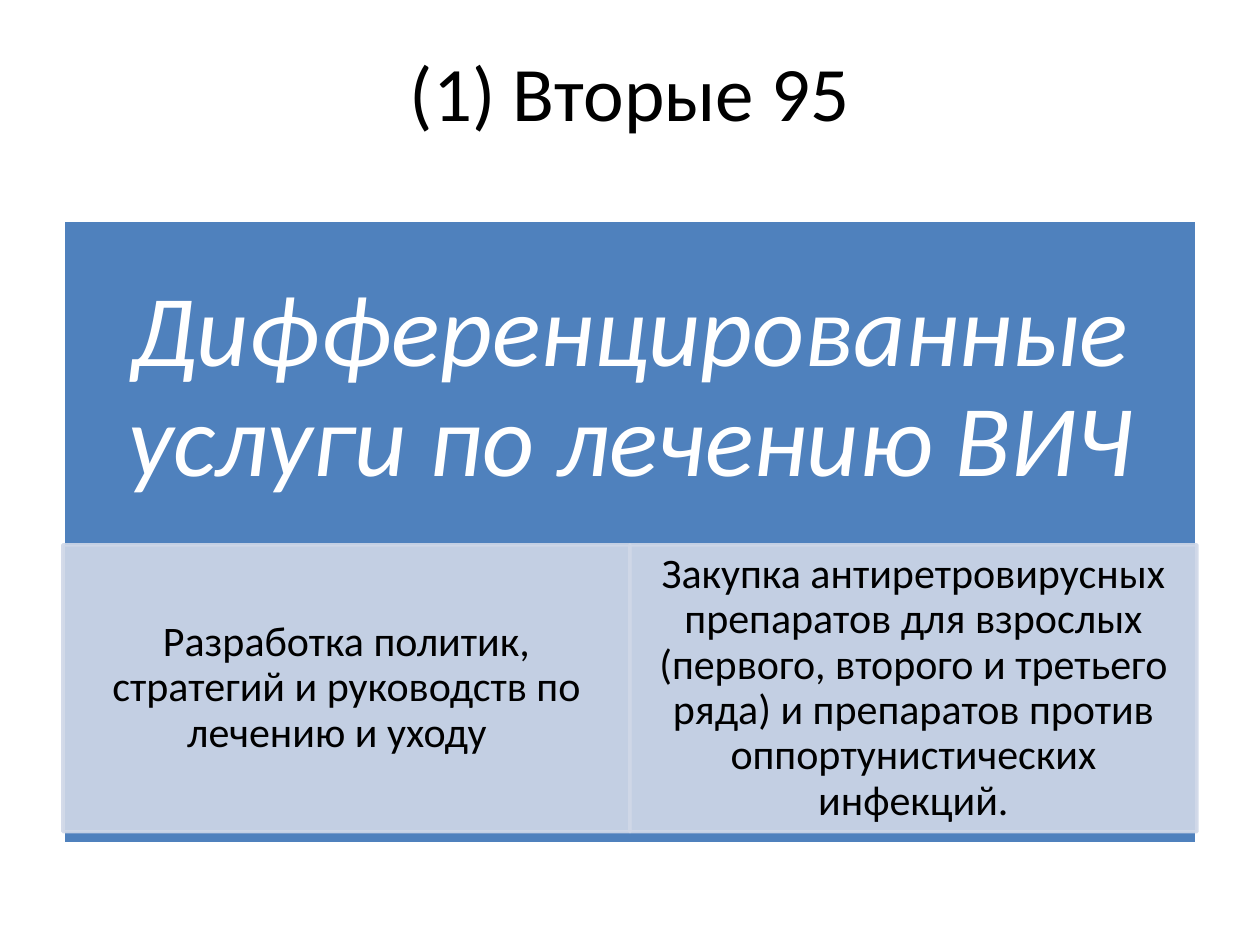
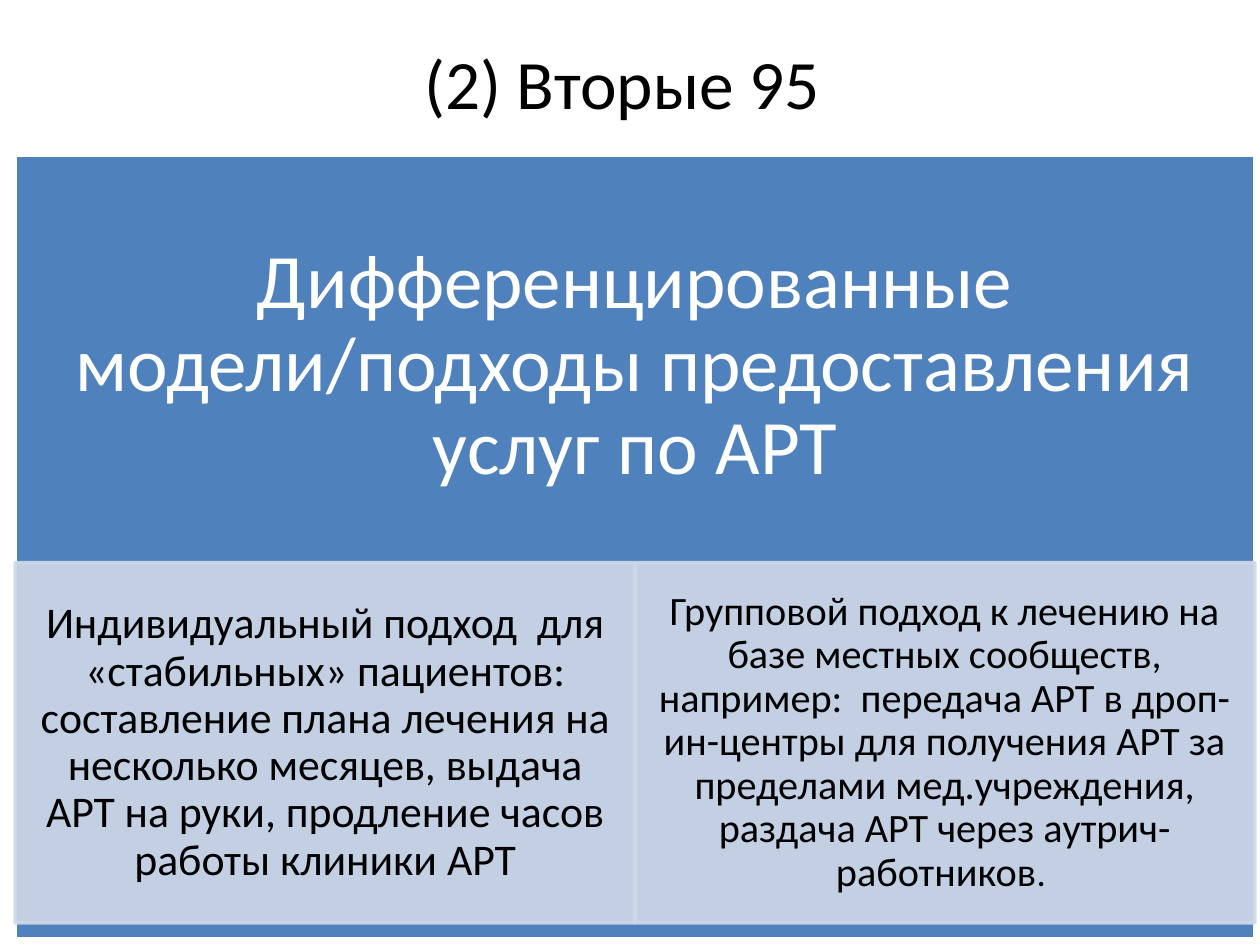
from dataclasses import dataclass

from lxml import etree
from pptx import Presentation
from pptx import util as u
from pptx.dml.color import RGBColor
from pptx.enum import shapes, text
from pptx.oxml.ns import qn

PAGE_WIDTH, PAGE_HEIGHT = 10, 7.5
FONT = "Calibri"
COLORS = {"band": "4F81BD", "cell": "D0D8E8", "white": "FFFFFF", "black": "000000"}
CELL_OPACITY = 90
# Shares of the band's height
HEADING_SHARE, CELL_TOP, CELL_SHARE = 0.54, 0.52, 0.46


@dataclass(frozen=True)
class Frame:
    left: float
    top: float
    width: float
    height: float

    def lengths(self) -> list[u.Inches]:
        return [u.Inches(n) for n in (self.left, self.top, self.width, self.height)]


@dataclass(frozen=True)
class Label:
    words: str
    size: float
    color: str = "black"
    italic: bool = False
    ending: str = ""
    ending_size: float = 0


@dataclass(frozen=True)
class Topic:
    title: Label
    title_frame: Frame
    band: Frame
    heading: Label
    heading_inset: float
    cells: tuple[Label, ...]


TOPICS = (
    Topic(
        Label("(1) Вторые 95", 44), Frame(0.5, 0.13, 9, 1.18),
        Frame(0.5, 1.75, 9, 4.95),
        Label("Дифференцированные услуги по лечению ВИЧ", 58, "white", True), 0.45,
        (
            Label("Разработка политик, стратегий и руководств по лечению и уходу  ", 24),
            Label("Закупка антиретровирусных препаратов для взрослых (первого, второго "
                  "и третьего ряда) и препаратов против оппортунистических инфекций.", 24),
        ),
    ),
    Topic(
        Label("(2) Вторые 95 ", 39.6), Frame(0.5, 0.3, 9, 0.69),
        Frame(0.12, 1.23, 9.84, 6.22),
        Label("Дифференцированные модели/подходы предоставления услуг по АРТ", 44, "white"), 0.34,
        (
            Label("Индивидуальный подход  для «стабильных» пациентов: составление плана "
                  "лечения на несколько месяцев, выдача АРТ на руки, продление часов "
                  "работы клиники АРТ", 25),
            Label("Групповой подход к лечению на базе местных сообществ, например:  "
                  "передача АРТ в дроп-ин-центры для получения АРТ за пределами "
                  "мед.учреждения, раздача АРТ через аутрич-работников", 23,
                  ending=". ", ending_size=21),
        ),
    ),
)


def rgb(name: str) -> RGBColor:
    return RGBColor.from_string(COLORS[name])


def write(box, label: Label, side: float = 0.1, top: float = 0.05,
          bottom: float = 0.05, spacing: float = 1.0) -> None:
    """Fill a box with one centred paragraph."""
    frame = box.text_frame
    frame.word_wrap = True
    frame.vertical_anchor = text.MSO_ANCHOR.MIDDLE
    frame.margin_left = frame.margin_right = u.Inches(side)
    frame.margin_top, frame.margin_bottom = u.Inches(top), u.Inches(bottom)
    para = frame.paragraphs[0]
    para.alignment = text.PP_ALIGN.CENTER
    para.line_spacing = spacing
    para.font.name = FONT
    para.font.size = u.Pt(label.size)
    para.font.italic = label.italic
    para.font.color.rgb = rgb(label.color)
    para.add_run().text = label.words
    if label.ending:
        span = para.add_run()
        span.text = label.ending
        span.font.size = u.Pt(label.ending_size)


def add_panel(page, frame: Frame, fill: str, line: str, opacity: int = 100):
    """Draw a rectangle with a 2 pt outline."""
    panel = page.shapes.add_shape(shapes.MSO_SHAPE.RECTANGLE, *frame.lengths())
    panel.shadow.inherit = False
    panel.fill.solid()
    panel.fill.fore_color.rgb = rgb(fill)
    panel.line.color.rgb = rgb(line)
    panel.line.width = u.Pt(2)
    if opacity < 100:
        for color in panel.element.spPr.iter(qn("a:srgbClr")):
            etree.SubElement(color, qn("a:alpha"), val=str(opacity * 1000))
    return panel


def add_topic(deck, topic: Topic) -> None:
    page = deck.slides.add_slide(deck.slide_layouts[6])
    band, inset = topic.band, topic.heading_inset

    # Title
    write(page.shapes.add_textbox(*topic.title_frame.lengths()), topic.title)

    # Band, its heading kept in the upper part
    panel = add_panel(page, band, "band", "white")
    below = band.height * (1 - HEADING_SHARE)
    write(panel, topic.heading, inset, inset, inset + below, 0.9)

    # Equal cells across the lower part
    width = band.width / len(topic.cells)
    for column, label in enumerate(topic.cells):
        frame = Frame(band.left + column * width, band.top + CELL_TOP * band.height,
                      width, CELL_SHARE * band.height)
        cell = add_panel(page, frame, "cell", "cell", CELL_OPACITY)
        write(cell, label, label.size / 128, 0.03, 0.03, 0.9)


def main() -> None:
    deck = Presentation()
    deck.slide_width, deck.slide_height = u.Inches(PAGE_WIDTH), u.Inches(PAGE_HEIGHT)
    for topic in TOPICS:
        add_topic(deck, topic)
    deck.save("out.pptx")


if __name__ == "__main__":
    main()
